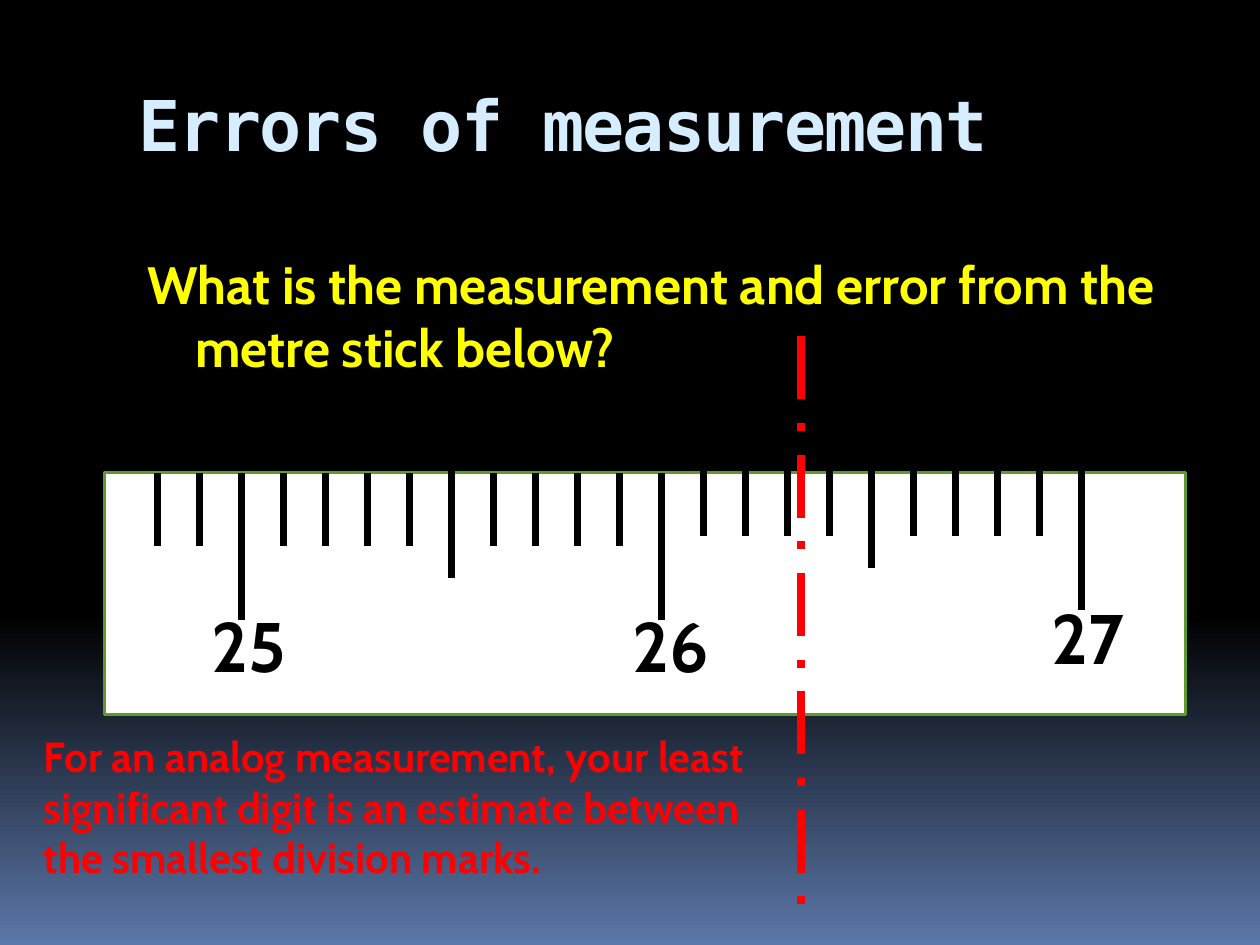
from pptx import Presentation
from pptx.dml.color import RGBColor
from pptx.enum.dml import MSO_LINE
from pptx.enum.shapes import MSO_CONNECTOR as Connector, MSO_SHAPE as Shape
from pptx.enum.text import MSO_ANCHOR as Anchor
from pptx.oxml.ns import qn
from pptx.util import Inches, Pt
from lxml.etree import SubElement

BLACK = RGBColor(0x00, 0x00, 0x00)
WHITE = RGBColor(0xFF, 0xFF, 0xFF)
RED = RGBColor(0xFF, 0x00, 0x00)
YELLOW = RGBColor(0xFF, 0xFF, 0x00)
PALE_BLUE = RGBColor(0xD6, 0xEC, 0xFF)
SLATE_BLUE = RGBColor(0x5B, 0x77, 0xA8)
GREEN = RGBColor(0x5E, 0x9B, 0x2C)

RULER_TOP = 3.75
FIRST_TICK = 1.25
TICK_GAP = 1 / 3
TICK_COUNT = 23
RAISE = 0.08
LABELS = [("25", 1.58, 4.73, 0.92), ("26", 4.92, 4.73, 1.5), ("27", 8.25, 4.67, 0.92)]


def set_background(slide):
    fill = slide.background.fill
    fill.gradient()
    fill.gradient_angle = 270
    for stop, position, color in zip(fill.gradient_stops, (0.65, 1), (BLACK, SLATE_BLUE)):
        stop.position = position
        stop.color.rgb = color


def add_text(shapes, text, left, top, width, height, size, color, font="Cabin"):
    box = shapes.add_textbox(Inches(left), Inches(top), Inches(width), Inches(height))
    frame = box.text_frame
    frame.word_wrap = True
    frame.vertical_anchor = Anchor.TOP
    paragraph = frame.paragraphs[0]
    paragraph.text = text
    paragraph.font.name = font
    paragraph.font.size = Pt(size)
    paragraph.font.bold = True
    paragraph.font.color.rgb = color
    return box


def add_vertical_line(shapes, x, top, bottom, color):
    line = shapes.add_connector(
        Connector.STRAIGHT, Inches(x), Inches(top), Inches(x), Inches(bottom))
    line.line.color.rgb = color
    line.line.width = Pt(4.5)
    SubElement(line._element.spPr, qn("a:effectLst"))
    return line


def add_title(slide):
    title = add_text(slide.shapes, "Errors of measurement", 1, 0.56, 8.5, 1,
                     40, PALE_BLUE, "DejaVu Sans Mono")
    title.text_frame.margin_top = Inches(0.09)
    run = title.text_frame.paragraphs[0].runs[0]
    run.font._element.set("spc", "-100")


def add_question(slide):
    question = add_text(
        slide.shapes, "What is the measurement and error from the metre stick below?",
        1, 1.95, 8.5, 5, 30, YELLOW)
    properties = question.text_frame.paragraphs[0]._p.get_or_add_pPr()
    properties.set("marL", str(Inches(0.45)))
    properties.set("indent", str(Inches(-0.38)))


def add_tick(shapes, index):
    top = RULER_TOP - (RAISE if index > 12 else 0)
    length = 0.58
    if index % 10 == 2:
        length = 1.17
    elif index % 10 == 7:
        top -= RAISE
        length = 0.92
    add_vertical_line(shapes, FIRST_TICK + index * TICK_GAP, top, top + length, BLACK)


def add_ruler(slide):
    shapes = slide.shapes.add_group_shape().shapes
    body = shapes.add_shape(
        Shape.RECTANGLE, Inches(0.83), Inches(RULER_TOP), Inches(8.58), Inches(1.92))
    body.shadow.inherit = False
    body.fill.solid()
    body.fill.fore_color.rgb = WHITE
    body.line.color.rgb = GREEN
    body.line.width = Pt(1.5)
    for index in range(TICK_COUNT):
        add_tick(shapes, index)
    for text, left, top, width in LABELS:
        add_text(shapes, text, left, top, width, 0.77, 40, BLACK)


def main():
    presentation = Presentation()
    presentation.slide_width = Inches(10)
    presentation.slide_height = Inches(7.5)
    slide = presentation.slides.add_slide(presentation.slide_layouts[6])
    set_background(slide)
    add_title(slide)
    add_question(slide)
    add_ruler(slide)
    marker = add_vertical_line(slide.shapes, 6.36, 2.67, 7.25, RED)
    marker.line.dash_style = MSO_LINE.LONG_DASH_DOT
    add_text(slide.shapes,
             "For an analog measurement, your least significant digit is an estimate "
             "between the smallest division marks.",
             0.25, 5.75, 5.92, 1.31, 24, RED)
    presentation.save("out.pptx")


if __name__ == "__main__":
    main()
